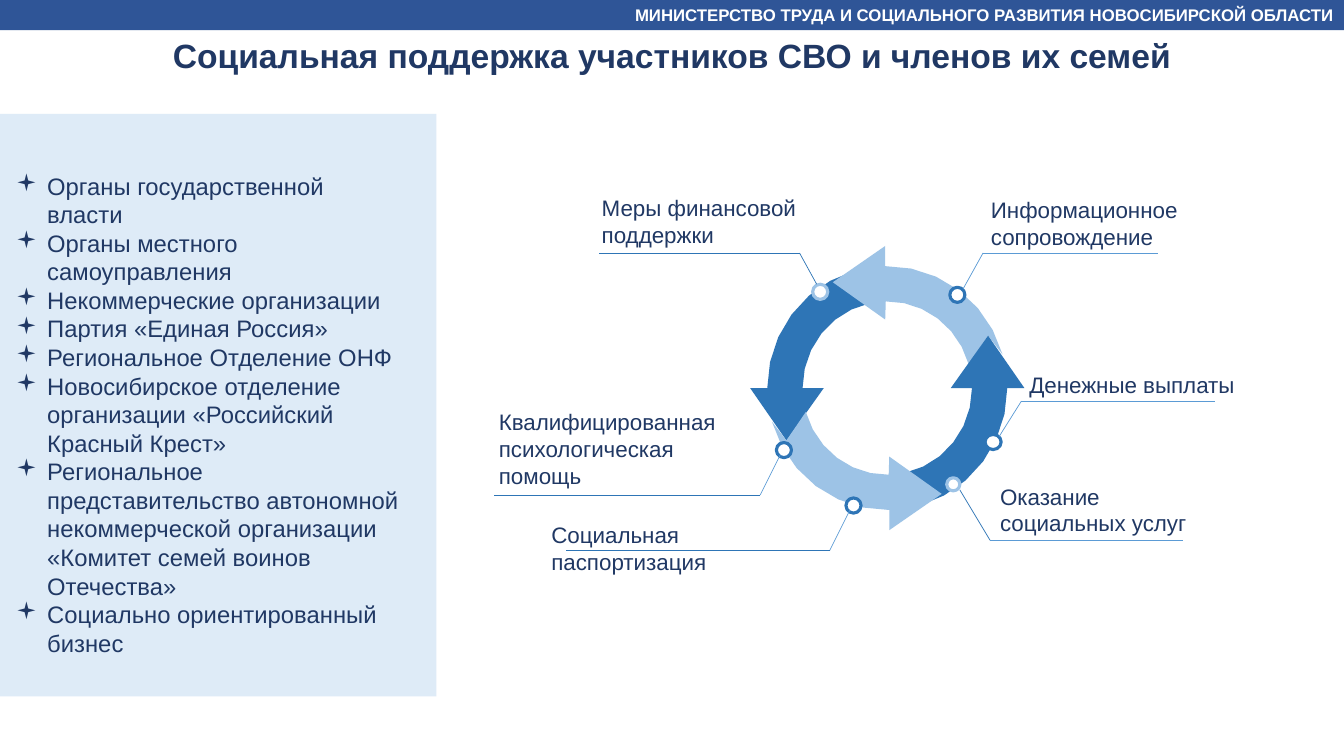
from dataclasses import dataclass
from math import cos, radians, sin

from lxml.etree import SubElement
from pptx import Presentation
from pptx.dml.color import RGBColor
from pptx.enum.shapes import MSO_CONNECTOR, MSO_SHAPE
from pptx.enum.text import MSO_ANCHOR, MSO_AUTO_SIZE, PP_ALIGN
from pptx.oxml.ns import qn
from pptx.util import Inches, Pt


@dataclass(frozen=True)
class Theme:
    font: str = "Arial"
    bullet_font: str = "Wingdings"
    navy: str = "203864"
    header: str = "2F5597"
    panel: str = "DEEBF7"
    dark: str = "2E75B6"
    light: str = "9DC3E6"
    thin: str = "5B9BD5"
    white: str = "FFFFFF"
    title_size: float = 24
    list_size: float = 17
    label_size: float = 16
    header_size: float = 12
    ring_width: float = 2.25
    line_width: float = 0.5


THEME = Theme()
CELL = Inches(1)
COLUMNS, ROWS = 13.33, 7.5

MINISTRY = "МИНИСТЕРСТВО ТРУДА И СОЦИАЛЬНОГО РАЗВИТИЯ НОВОСИБИРСКОЙ ОБЛАСТИ"
TITLE = "Социальная поддержка участников СВО и членов их семей"
PARTICIPANTS = [
    "Органы государственной власти",
    "Органы местного самоуправления",
    "Некоммерческие организации",
    "Партия «Единая Россия»",
    "Региональное Отделение ОНФ",
    "Новосибирское отделение организации «Российский Красный Крест»",
    "Региональное представительство автономной некоммерческой организации "
    "«Комитет семей воинов Отечества»",
    "Социально ориентированный бизнес",
]

# text, text area, dot area, ring colour, lead start, elbow, shelf end, lead colour, shelf colour
CALLOUTS = [
    ("Меры финансовой поддержки", (5.87, 1.88, 3.03, 0.64), (8.06, 2.82, 0.15, 0.15),
     THEME.light, (8.1, 2.82), (7.93, 2.51), 5.94, THEME.dark, THEME.dark),
    ("Социальная паспортизация", (5.37, 5.12, 2.96, 0.37), (8.39, 4.94, 0.15, 0.15),
     THEME.dark, (8.43, 5.06), (8.23, 5.46), 5.61, THEME.thin, THEME.dark),
    ("Информационное сопровождение", (9.73, 1.9, 3.43, 0.37), (9.42, 2.85, 0.15, 0.15),
     THEME.dark, (9.55, 2.87), (9.75, 2.51), 11.49, THEME.thin, THEME.thin),
    ("Квалифицированная психологическая помощь", (4.85, 4, 2.57, 0.63),
     (7.7, 4.39, 0.15, 0.15),
     THEME.dark, (7.74, 4.51), (7.54, 4.91), 4.9, THEME.thin, THEME.dark),
    ("Денежные выплаты", (10.11, 3.63, 2.29, 0.37), (9.77, 4.31, 0.16, 0.15),
     THEME.dark, (9.91, 4.33), (10.13, 3.98), 12.05, THEME.thin, THEME.thin),
    ("Оказание социальных услуг", (9.82, 4.74, 2.16, 0.64), (9.39, 4.74, 0.13, 0.13),
     THEME.light, (9.52, 4.86), (9.82, 5.36), 11.73, THEME.dark, THEME.thin),
]

CENTER = (8.8, 3.85)
OUTER = (1.19, 1.21)
INNER = (0.84, 0.86)


def place(*lengths):
    return [round(length * CELL) for length in lengths]


def arc(radii, start, end, steps=6):
    angles = [radians(start + (end - start) * step / steps) for step in range(steps + 1)]
    return [(CENTER[0] + radii[0] * cos(angle), CENTER[1] - radii[1] * sin(angle))
            for angle in angles]


def opposite(points):
    return [(2 * CENTER[0] - column, 2 * CENTER[1] - row) for column, row in points]


def paint(shape, fill, line=None):
    shape.shadow.inherit = False
    shape.fill.solid()
    shape.fill.fore_color.rgb = RGBColor.from_string(fill)
    if line:
        shape.line.color.rgb = RGBColor.from_string(line)
        shape.line.width = Pt(THEME.ring_width)
    else:
        shape.line.fill.background()


def write(shape, lines, size, color=THEME.navy, bold=False, align=PP_ALIGN.LEFT,
          anchor=MSO_ANCHOR.TOP):
    frame = shape.text_frame
    frame.word_wrap = True
    frame.auto_size = MSO_AUTO_SIZE.NONE
    frame.vertical_anchor = anchor
    frame.text = "\n".join(lines)
    for para in frame.paragraphs:
        para.alignment = align
        para.font.name = THEME.font
        para.font.size = Pt(size)
        para.font.bold = bold
        para.font.color.rgb = RGBColor.from_string(color)


def add_bullets(box):
    for para in box.text_frame.paragraphs:
        properties = para._p.get_or_add_pPr()
        properties.set("marL", str(Inches(0.31)))
        properties.set("indent", str(-Inches(0.31)))
        for tag, name, value in [("a:buFont", "typeface", THEME.bullet_font),
                                 ("a:buChar", "char", "▪")]:
            bullet = SubElement(properties, qn(tag))
            bullet.set(name, value)
            properties.remove(bullet)
            properties.insert_element_before(bullet, "a:tabLst", "a:defRPr", "a:extLst")


def add_shape(page, kind, area, fill, line=None):
    shape = page.shapes.add_shape(kind, *place(*area))
    paint(shape, fill, line)
    return shape


def add_line(page, start, end, color):
    line = page.shapes.add_connector(MSO_CONNECTOR.STRAIGHT, *place(*start, *end))
    line.line.color.rgb = RGBColor.from_string(color)
    line.line.width = Pt(THEME.line_width)
    SubElement(line._element.spPr, qn("a:effectLst"))


def add_arrow(page, points, color):
    corners = [place(*point) for point in points]
    builder = page.shapes.build_freeform(*corners[0])
    builder.add_line_segments(corners[1:], close=True)
    paint(builder.convert_to_shape(), color)


def add_cycle(page):
    left = [(7.8, 4.37), (7.44, 3.85), *arc(OUTER, 180, 106), (8.31, 2.83),
            *arc(INNER, 102, 180), (8.17, 3.85)]
    top = [(8.78, 3.17), (8.26, 2.8), (8.78, 2.44), *arc(OUTER, 91, 16), (9.8, 3.33),
           *arc(INNER, 16, 91)]
    for points, color in [(left, THEME.dark), (top, THEME.light),
                          (opposite(left), THEME.dark), (opposite(top), THEME.light)]:
        add_arrow(page, points, color)


def add_callout(page, text, text_area, dot_area, ring, start, elbow, shelf_end,
                lead_color, shelf_color):
    add_shape(page, MSO_SHAPE.OVAL, dot_area, THEME.white, ring)
    add_line(page, start, elbow, lead_color)
    add_line(page, elbow, (shelf_end, elbow[1]), shelf_color)
    write(page.shapes.add_textbox(*place(*text_area)), [text], THEME.label_size)


def main():
    deck = Presentation()
    deck.slide_width, deck.slide_height = place(COLUMNS, ROWS)
    page = deck.slides.add_slide(deck.slide_layouts[5])

    title = page.shapes.title
    title.left, title.top, title.width, title.height = place(0, 0.3, COLUMNS, 0.5)
    write(title, [TITLE], THEME.title_size, bold=True, align=PP_ALIGN.CENTER)

    add_shape(page, MSO_SHAPE.RECTANGLE, (0, 1.13, 4.33, 5.78), THEME.panel)
    participants = page.shapes.add_textbox(*place(0.06, 1.65, 4.02, 4.96))
    write(participants, PARTICIPANTS, THEME.list_size)
    add_bullets(participants)

    add_cycle(page)
    for callout in CALLOUTS:
        add_callout(page, *callout)

    header = add_shape(page, MSO_SHAPE.RECTANGLE, (0, 0, COLUMNS, 0.3), THEME.header)
    write(header, [MINISTRY], THEME.header_size, THEME.white, True, PP_ALIGN.RIGHT,
          MSO_ANCHOR.MIDDLE)
    deck.save("out.pptx")


if __name__ == "__main__":
    main()
